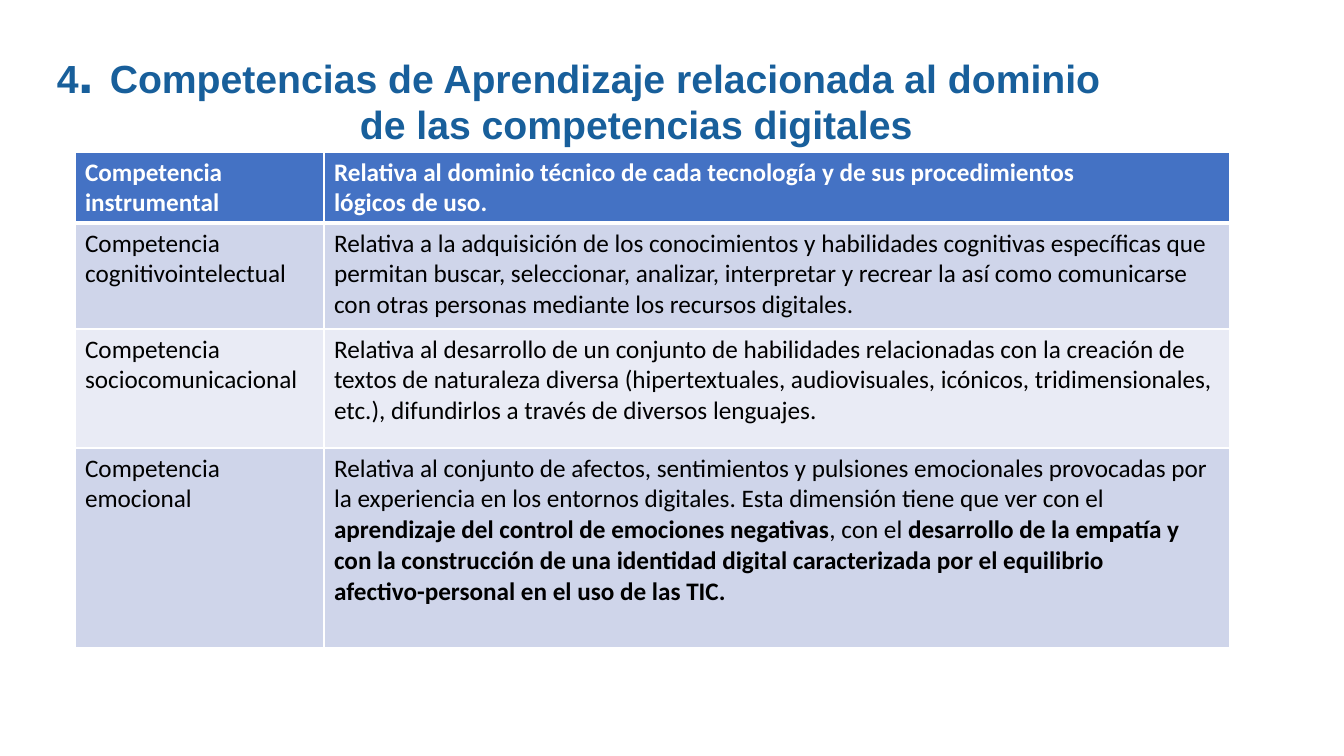
from lxml.etree import SubElement
from pptx import Presentation
from pptx.dml.color import RGBColor
from pptx.enum.text import MSO_ANCHOR as Anchor
from pptx.oxml.ns import qn
from pptx.util import Emu, Pt

PX = 914400 / 100.8
WHITE, BLACK, TITLE_BLUE = "FFFFFF", "000000", "185F9B"
HEADER_BLUE, BAND_DARK, BAND_LIGHT = "4472C4", "CFD5EA", "E9EBF5"


def px(length):
    return Emu(round(length * PX))


def color(value):
    return RGBColor.from_string(value)


class SlideBuilder:
    """Holds the style and the current slide."""

    title_font, table_font = "Arial", "Calibri"
    title_size, table_size = 28, 18

    def __init__(self, deck):
        self.slide = deck.slides.add_slide(deck.slide_layouts[6])

    def style(self, para, name, size, tint, bold):
        font = para.font
        font.name, font.size, font.bold = name, Pt(size), bold
        font.color.rgb = color(tint)

    def title(self, left, top, width, height, lines):
        """Each line is an indent and a list of (text, size) spans."""
        box = self.slide.shapes.add_textbox(px(left), px(top), px(width), px(height))
        frame = box.text_frame
        frame.word_wrap = True
        frame.vertical_anchor = Anchor.BOTTOM
        for index, (indent, spans) in enumerate(lines):
            para = frame.add_paragraph() if index else frame.paragraphs[0]
            para.line_spacing = 0.9
            para._p.get_or_add_pPr().set("marL", str(px(indent)))
            self.style(para, self.title_font, self.title_size, TITLE_BLUE, True)
            for text, size in spans:
                span = para.add_run()
                span.text = text
                if size != self.title_size:
                    span.font.size = Pt(size)

    def borders(self, cell, **widths):
        properties = cell._tc.get_or_add_tcPr()
        for side, width in widths.items():
            line = SubElement(properties, qn(f"a:ln{side}"), w=str(Pt(width)))
            fill = SubElement(line, qn("a:solidFill"))
            SubElement(fill, qn("a:srgbClr"), val=WHITE)

    def cell(self, cell, paragraphs, header, fill):
        """Each paragraph is a list of spans; every second span is bold."""
        for index, spans in enumerate(paragraphs):
            frame = cell.text_frame
            para = frame.add_paragraph() if index else frame.paragraphs[0]
            self.style(para, self.table_font, self.table_size,
                       WHITE if header else BLACK, header)
            for position, text in enumerate(spans):
                if text:
                    span = para.add_run()
                    span.text = text
                    if position % 2:
                        span.font.bold = True
        cell.fill.solid()
        cell.fill.fore_color.rgb = color(fill)

    def table(self, left, top, columns, heights, rows):
        table = self.slide.shapes.add_table(
            len(rows), len(columns), px(left), px(top),
            px(sum(columns)), px(sum(heights))).table
        table.horz_banding = False
        for column, width in zip(table.columns, columns):
            column.width = px(width)
        for index, (row, height, texts) in enumerate(zip(table.rows, heights, rows)):
            row.height = px(height)
            header = index == 0
            fill = HEADER_BLUE if header else (BAND_LIGHT, BAND_DARK)[index % 2]
            for cell, paragraphs in zip(row.cells, texts):
                self.borders(cell, L=1, R=1, T=3 if index == 1 else 1,
                             B=3 if header else 1)
                self.cell(cell, paragraphs, header, fill)


COMPETENCES = [
    ([["Competencia instrumental"]],
     [["Relativa al dominio técnico de cada tecnología y de sus procedimientos"],
      ["lógicos de uso."]]),
    ([["Competencia cognitivointelectual"]],
     [["Relativa a la adquisición de los conocimientos y habilidades cognitivas "
       "específicas que permitan buscar, seleccionar, analizar, interpretar y "
       "recrear la así como comunicarse con otras personas mediante los recursos "
       "digitales."]]),
    ([["Competencia"], ["sociocomunicacional"]],
     [["Relativa al desarrollo de un conjunto de habilidades relacionadas con la "
       "creación de textos de naturaleza diversa (hipertextuales, audiovisuales, "
       "icónicos, tridimensionales, etc.), difundirlos a través de diversos "
       "lenguajes."]]),
    ([["Competencia emocional"]],
     [["Relativa al conjunto de afectos, sentimientos y pulsiones emocionales "
       "provocadas por la experiencia en los entornos digitales. Esta dimensión "
       "tiene que ver con el ",
       "aprendizaje del control de emociones negativas",
       ", con el ",
       "desarrollo de la empatía y con la construcción de una identidad digital "
       "caracterizada por el equilibrio"],
      ["", "afectivo-personal en el uso de las TIC."]]),
]


def main():
    deck = Presentation()
    deck.slide_width, deck.slide_height = px(1344), px(756)
    builder = SlideBuilder(deck)

    # Title in two lines, the second one indented
    builder.title(47, 69, 1072, 84, [
        (0, [("4", 28), (". ", 40),
             ("Competencias de Aprendizaje relacionada al dominio", 28)]),
        (303, [("de las competencias digitales", 28)]),
    ])

    # Table of competences
    builder.table(75, 152, [249, 906], [71, 106, 119, 200], COMPETENCES)

    deck.save("out.pptx")


if __name__ == "__main__":
    main()
